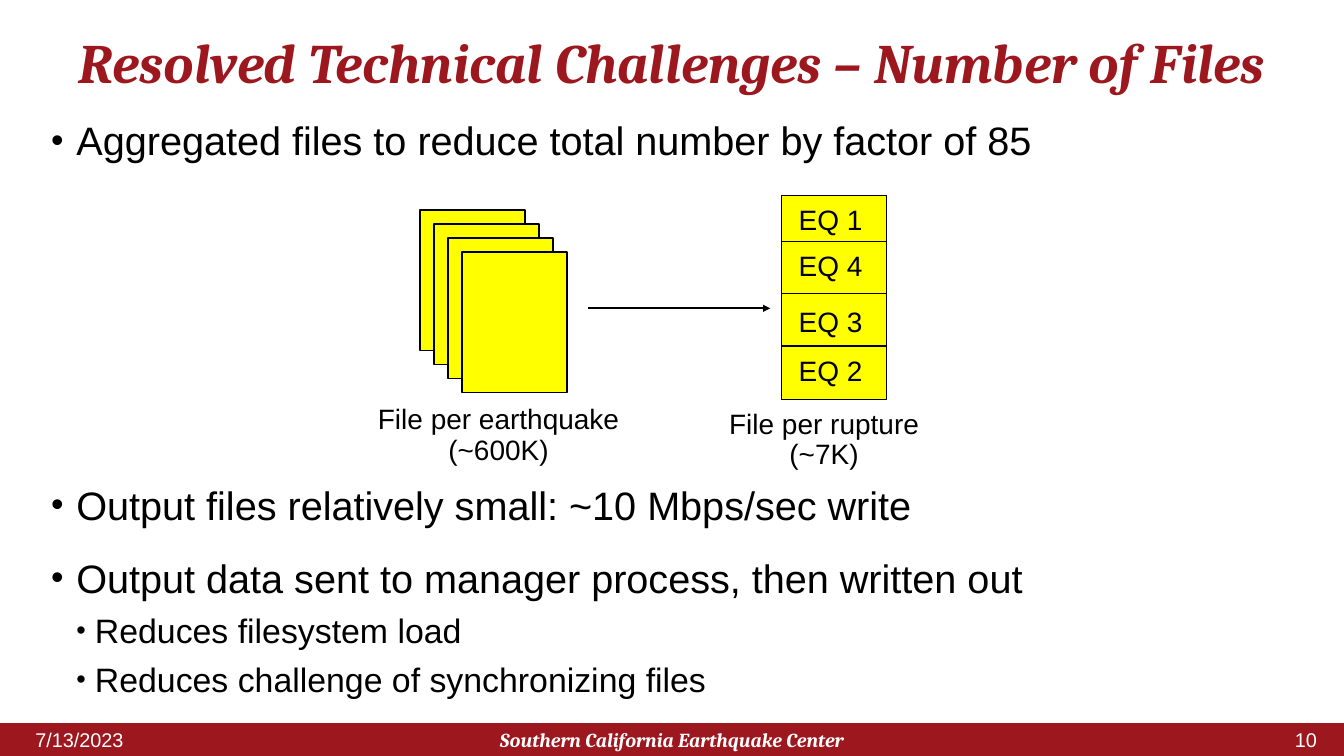
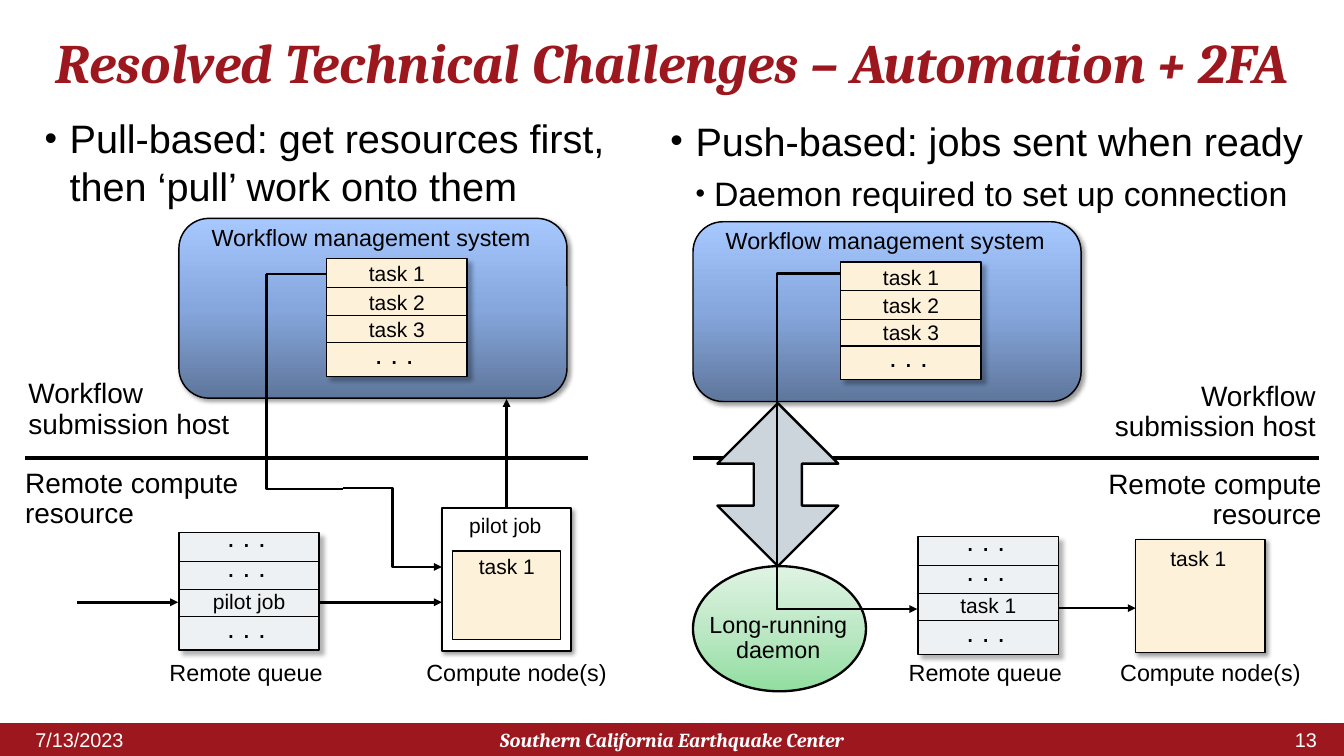
from copy import deepcopy

from lxml.etree import SubElement
from pptx import Presentation
from pptx.dml.color import RGBColor
from pptx.enum.shapes import MSO_CONNECTOR as LINK, MSO_SHAPE as SHAPE
from pptx.enum.text import MSO_ANCHOR as ANCHOR, MSO_AUTO_SIZE as FIT, PP_ALIGN as ALIGN
from pptx.oxml.ns import qn
from pptx.util import Inches, Pt

CRIMSON = RGBColor(0x9D, 0x17, 0x1E)
WHITE = RGBColor(0xFF, 0xFF, 0xFF)
BLACK = RGBColor(0, 0, 0)
YELLOW = RGBColor(0xFF, 0xFF, 0)
CREAM = RGBColor(0xFD, 0xF1, 0xD9)
MIST = RGBColor(0xEE, 0xF1, 0xF3)
STEEL = RGBColor(0xCC, 0xD5, 0xDB)
BLUES = (RGBColor(0x5E, 0x76, 0x9B), RGBColor(0x86, 0xA7, 0xDD), RGBColor(0xA6, 0xC8, 0xFF))
GREENS = (RGBColor(0x91, 0xDE, 0xA0), RGBColor(0xBD, 0xE8, 0xC5), RGBColor(0xDF, 0xF3, 0xE3))
SANS, SERIF = "Arial", "Cambria"
SOFT, FAINT = (40, 3), (30, 5)


def block(slide, kind, x, y, w, h, fill, line=1, shadow=None):
    shape = slide.shapes.add_shape(kind, Inches(x), Inches(y), Inches(w), Inches(h))
    shape.shadow.inherit = False
    if isinstance(fill, RGBColor):
        shape.fill.solid()
        shape.fill.fore_color.rgb = fill
    else:
        shape.fill.gradient()
        shape.fill.gradient_angle = 90
        stops = shape.element.find(".//" + qn("a:gsLst"))
        stops.insert(1, deepcopy(stops[0]))
        for stop, color, position in zip(shape.fill.gradient_stops, fill, (0, 0.5, 1)):
            stop.color.rgb = color
            stop.position = position
    if line:
        shape.line.color.rgb = BLACK
        shape.line.width = Pt(line)
    else:
        shape.line.fill.background()
    if shadow:
        opacity, distance = shadow
        effects = shape.element.find(".//" + qn("a:effectLst"))
        outer = SubElement(effects, qn("a:outerShdw"), blurRad=str(Pt(4)), dist=str(Pt(distance)),
                           dir="2700000", algn="tl", rotWithShape="0")
        color = SubElement(outer, qn("a:srgbClr"), val=str(BLACK))
        SubElement(color, qn("a:alpha"), val=str(opacity * 1000))
    return shape


def stroke(slide, x1, y1, x2, y2, width=2.25, arrow=False, bend=None):
    kind = LINK.STRAIGHT if bend is None else LINK.ELBOW
    link = slide.shapes.add_connector(kind, Inches(x1), Inches(y1), Inches(x2), Inches(y2))
    link.line.color.rgb = BLACK
    link.line.width = Pt(width)
    if bend is not None:
        guides = link.element.find(".//" + qn("a:avLst"))
        SubElement(guides, qn("a:gd"), name="adj1", fmla=f"val {int(bend * 100000)}")
    if arrow:
        SubElement(link.element.find(".//" + qn("a:ln")), qn("a:tailEnd"), type="triangle")
    SubElement(link.element.spPr, qn("a:effectLst"))
    return link


deck = Presentation()
deck.slide_width, deck.slide_height = Inches(16), Inches(9)
files = deck.slides.add_slide(deck.slide_layouts[1])
automation = deck.slides.add_slide(deck.slide_layouts[3])

band = block(files, SHAPE.RECTANGLE, 0, 8.61, 16, 0.39, CRIMSON, line=0)
band.element.find(".//" + qn("p:cNvPr")).set("id", "99")
deck.slide_master.shapes.element.insert(2, band.element)

headings = [
    (files, "Resolved Technical Challenges – Number of Files", "10"),
    (automation, "Resolved Technical Challenges – Automation + 2FA", "13"),
]
for slide, heading, number in headings:
    title = slide.shapes.title
    title.left, title.top = Inches(0.4), Inches(0.36)
    title.width, title.height = Inches(15.2), Inches(0.84)
    footers = [
        ("7/13/2023", 0.3, 8.69, 1.83, 0.24, ALIGN.LEFT, SANS),
        ("Southern California Earthquake Center", 5.3, 8.57, 5.4, 0.48, ALIGN.CENTER, SERIF),
        (number, 14.3, 8.69, 1.5, 0.24, ALIGN.RIGHT, SANS),
    ]
    styled = [(title, heading, ALIGN.CENTER, SERIF, 47.7, CRIMSON, ANCHOR.TOP)]
    for text, x, y, w, h, align, face in footers:
        footer = slide.shapes.add_textbox(Inches(x), Inches(y), Inches(w), Inches(h))
        styled.append((footer, text, align, face, 17, WHITE, ANCHOR.MIDDLE))
    for holder, text, align, face, size, color, anchor in styled:
        frame = holder.text_frame
        frame.text = text
        frame.word_wrap = True
        frame.auto_size = FIT.NONE
        frame.vertical_anchor = anchor
        frame.margin_left = frame.margin_right = Inches(0.12)
        frame.margin_top = frame.margin_bottom = Inches(0.06)
        paragraph = frame.paragraphs[0]
        paragraph.alignment = align
        paragraph.line_spacing = 0.9 if holder is title else 1.0
        paragraph.font.name = face
        paragraph.font.size = Pt(size)
        paragraph.font.color.rgb = color
        paragraph.font.bold = paragraph.font.italic = face == SERIF

bullet_lists = [
    (files.placeholders[1], 0.48, 1.32, 15.2, 7.1, [
        (0, "Aggregated files to reduce total number by factor of 85", 21.6),
        (0, "Output files relatively small: ~10 Mbps/sec write", 272),
        (0, "Output data sent to manager process, then written out", 21.6),
        (1, "Reduces filesystem load", 7.2),
        (1, "Reduces challenge of synchronizing files", 7.2)]),
    (automation.placeholders[1], 0.4, 1.3, 6.94, 1.57, [
        (0, "Pull-based: get resources first, then ‘pull’ work onto them", 21.6)]),
    (automation.placeholders[2], 7.85, 1.33, 7.98, 1.37, [
        (0, "Push-based: jobs sent when ready", 21.6),
        (1, "Daemon required to set up connection", 7.2)]),
]
levels = [(0.31, -0.3, 90, 34), (0.53, -0.22, 80, 29)]
for body, x, y, w, h, items in bullet_lists:
    body.left, body.top, body.width, body.height = Inches(x), Inches(y), Inches(w), Inches(h)
    frame = body.text_frame
    frame.text = "\n".join(text for _, text, _ in items)
    frame.auto_size = FIT.NONE
    frame.margin_left = frame.margin_right = Inches(0.12)
    frame.margin_top = frame.margin_bottom = Inches(0.06)
    for paragraph, (level, _, gap) in zip(frame.paragraphs, items):
        margin, indent, bullet_size, size = levels[level]
        paragraph.level = level
        paragraph.space_before = Pt(gap)
        props = paragraph._p.get_or_add_pPr()
        props.set("marL", str(Inches(margin)))
        props.set("indent", str(Inches(indent)))
        SubElement(SubElement(props, qn("a:buClr")), qn("a:srgbClr"), val=str(BLACK))
        SubElement(props, qn("a:buSzPct"), val=str(bullet_size * 1000))
        SubElement(props, qn("a:buFont"), typeface=SANS)
        SubElement(props, qn("a:buChar"), char="•")
        paragraph.font.name = SANS
        paragraph.font.size = Pt(size)
        paragraph.font.color.rgb = BLACK

labels = [
    (files, "File per earthquake\n(~600K)", 4.31, 4.78, 3.25, 24, ALIGN.CENTER, 2),
    (files, "File per rupture\n(~7K)", 8.42, 4.83, 2.78, 24, ALIGN.CENTER, 2),
    (automation, "Workflow submission host", 0.24, 4.47, 2.75, 24, ALIGN.LEFT, 2),
    (automation, "Remote compute resource", 0.2, 5.54, 2.75, 24, ALIGN.LEFT, 2),
    (automation, "Workflow submission host", 13.01, 4.5, 2.75, 24, ALIGN.RIGHT, 2),
    (automation, "Remote compute resource", 13.08, 5.55, 2.75, 24, ALIGN.RIGHT, 2),
    (automation, "Long-running daemon", 8.17, 7.25, 2.19, 20, ALIGN.CENTER, 2),
    (automation, "pilot job", 5.39, 6.09, 1.25, 18, ALIGN.CENTER, 1),
    (automation, "task 1", 5.41, 6.58, 1.25, 18, ALIGN.CENTER, 1),
    (automation, "task 1", 13.64, 6.48, 1.25, 18, ALIGN.CENTER, 1),
]

for sheet in range(4):
    block(files, SHAPE.RECTANGLE, 5 + sheet / 6, 2.5 + sheet / 6, 1.25, 1.67, YELLOW)
block(files, SHAPE.RECTANGLE, 9.3, 2.33, 1.25, 2.43, YELLOW)
for y in (2.88, 3.49, 4.12):
    stroke(files, 9.3, y, 10.55, y, 1)
for event, y in ((1, 2.41), (4, 2.96), (3, 3.62), (2, 4.2)):
    labels.append((files, f"EQ {event}", 9.41, y, 1.08, 24, ALIGN.LEFT, 1))
stroke(files, 7, 3.67, 9.17, 3.67, 2, arrow=True)

stroke(automation, 0.3, 5.45, 7, 5.45, 3)
stroke(automation, 8.25, 5.45, 15.7, 5.45, 3)

stacks = []
for x, y in ((2.13, 2.6), (8.25, 2.64)):
    block(automation, SHAPE.ROUNDED_RECTANGLE, x, y, 4.62, 2.14, BLUES, 1.25, SOFT)
    labels.append((automation, "Workflow management system", x + 0.29, y + 0.04, 4.04, 20, ALIGN.LEFT, 1))
    stacks.append((x + 1.76, y + 0.48, CREAM, 1, [
        ("task 1", 0.01), ("task 2", 0.35), ("task 3", 0.67), (". . .", 0.92)]))
for x, y, job in ((2.13, 6.34, "pilot job"), (10.93, 6.39, "task 1")):
    labels.append((automation, "Remote queue", x - 0.26, 7.83, 2.12, 20, ALIGN.CENTER, 1))
    stacks.append((x, y, MIST, 1.25, [
        (". . .", -0.16), (". . .", 0.2), (job, 0.65), (". . .", 0.92)]))
for x, y, fill, line, rows in stacks:
    block(automation, SHAPE.RECTANGLE, x, y, 1.67, 1.4, fill, line, FAINT)
    for offset in (0.34, 0.68, 1):
        stroke(automation, x, y + offset, x + 1.67, y + offset, 1)
    for text, offset in rows:
        dots = text == ". . ."
        labels.append((automation, text, x - 0.07 if dots else x + 0.21, y + offset,
                       1.75 if dots else 1.25, 24 if dots else 18, ALIGN.CENTER, 1))

pilot_node = block(automation, SHAPE.RECTANGLE, 5.26, 6.05, 1.54, 1.7, WHITE, 1.25, SOFT)
block(automation, SHAPE.RECTANGLE, 5.39, 6.56, 1.28, 1.05, CREAM)
block(automation, SHAPE.RECTANGLE, 13.52, 6.42, 1.54, 1.35, CREAM, 1.25, SOFT)
for x in (5.26, 13.52):
    labels.append((automation, "Compute node(s)", x - 0.3, 7.82, 2.38, 20, ALIGN.CENTER, 1))
block(automation, SHAPE.OVAL, 8.25, 6.74, 2.06, 1.49, GREENS, 2)
tunnel = block(automation, SHAPE.UP_DOWN_ARROW, 8.54, 4.8, 1.44, 1.94, STEEL, 2)
tunnel.adjustments[0], tunnel.adjustments[1] = 0.5, 0.397

for x1, x2, y in ((0.92, 2.12, 7.17), (3.8, 5.26, 7.17), (9.25, 10.92, 7.25), (12.6, 13.52, 7.24)):
    stroke(automation, x1, y, x2, y, arrow=True)
stroke(automation, 3.17, 3.26, 3.89, 3.26)
stroke(automation, 3.17, 3.26, 4.08, 5.82, bend=0)
stroke(automation, 4.08, 5.81, 5.26, 6.75, arrow=True, bend=0.5)
stroke(automation, 9.25, 7.26, 10.01, 3.26, bend=0)
request = stroke(automation, 6.03, 6.05, 6.03, 4.75, arrow=True)
request.begin_connect(pilot_node, 0)

for slide, text, x, y, w, size, align, lines in labels:
    height = 0.09 + lines * size * 0.0155
    label = slide.shapes.add_textbox(Inches(x), Inches(y), Inches(w), Inches(height))
    frame = label.text_frame
    frame.text = text
    frame.word_wrap = True
    frame.auto_size = FIT.SHAPE_TO_FIT_TEXT
    for paragraph in frame.paragraphs:
        paragraph.alignment = align
        paragraph.line_spacing = 0.9
        paragraph.font.name = SANS
        paragraph.font.size = Pt(size)
        paragraph.font.color.rgb = BLACK

deck.save("out.pptx")
